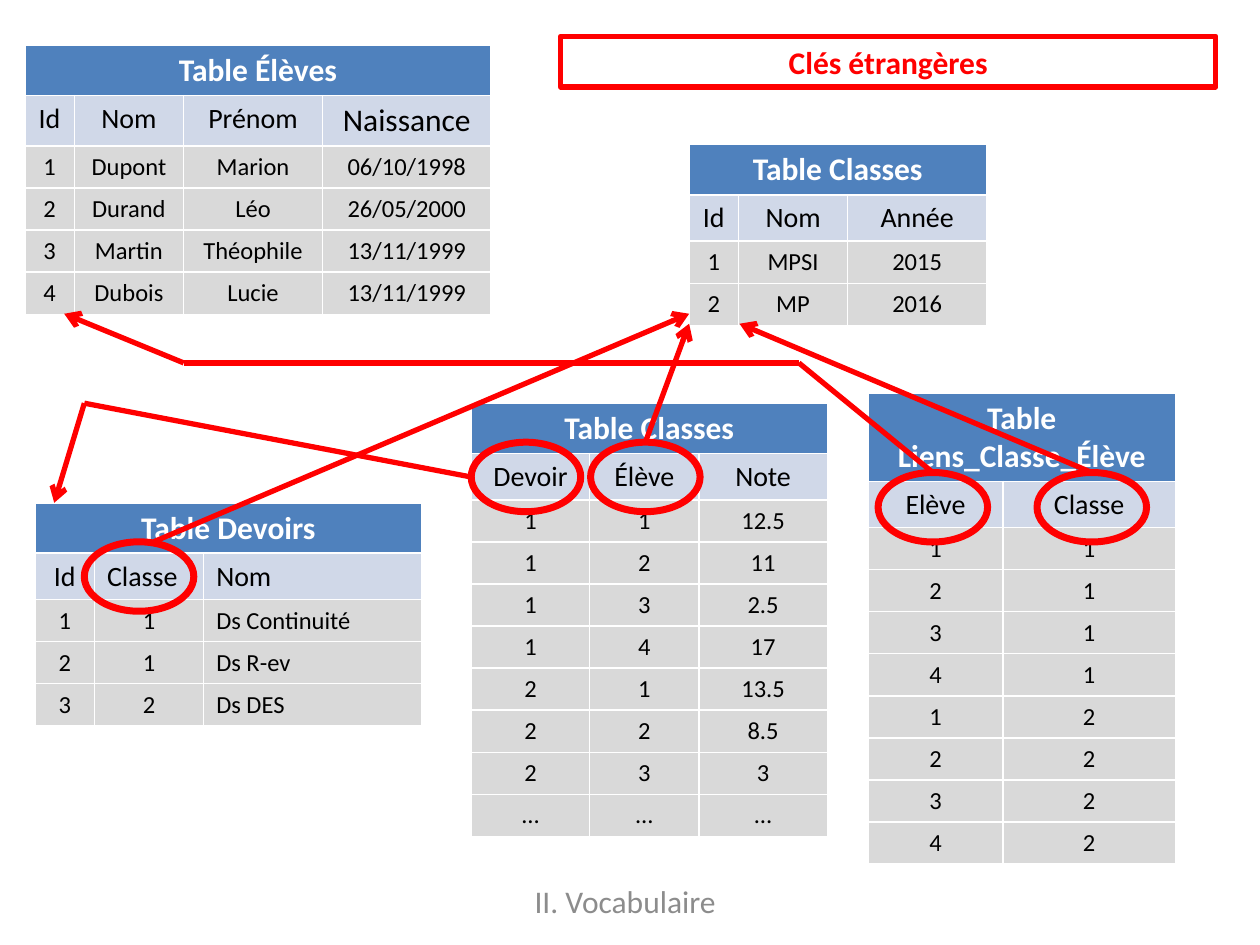
from itertools import pairwise

from lxml import etree
from pptx import Presentation
from pptx.dml.color import RGBColor
from pptx.enum.shapes import MSO_CONNECTOR, MSO_SHAPE
from pptx.enum.text import MSO_ANCHOR, PP_ALIGN
from pptx.oxml.ns import qn
from pptx.util import Pt

STRAIGHT = MSO_CONNECTOR.STRAIGHT
OVAL, RECTANGLE = MSO_SHAPE.OVAL, MSO_SHAPE.RECTANGLE
LEFT, CENTER = PP_ALIGN.LEFT, PP_ALIGN.CENTER
MIDDLE = MSO_ANCHOR.MIDDLE
TOP_SITE = 0

COLORS = {
    "white": "FFFFFF", "black": "000000", "red": "FF0000", "gray": "8C8C8C",
    "title": "4F81BD", "heading": "D0D8E8", "body": "D9D9D9",
}
TITLE = {"size": 18, "color": "white", "bold": True, "fill": "title", "height": 28}
HEADING = {"size": 16, "color": "black", "bold": False, "fill": "heading", "height": 25}
BODY = {"size": 14, "color": "black", "bold": False, "fill": "body", "height": 21.6}


def rgb(name):
    return RGBColor.from_string(COLORS[name])


class KeySlide:
    """Current slide and the style shared by its elements."""

    font = "Calibri"
    accent = "red"
    ring_size = (62.6, 39.7)

    def __init__(self, slide):
        self.slide = slide
        self.shapes = slide.shapes

    def add_text(self, text_frame, text, size, color, bold=False, align=CENTER):
        paragraph = text_frame.paragraphs[0]
        paragraph.alignment = align
        run = paragraph.add_run()
        run.text = text
        values = {"name": self.font, "size": Pt(size), "bold": bold}
        for name, value in values.items():
            setattr(run.font, name, value)
        run.font.color.rgb = rgb(color)

    def footer(self, text, *box):
        text_frame = self.shapes.add_textbox(*map(Pt, box)).text_frame
        text_frame.word_wrap = True
        text_frame.vertical_anchor = MIDDLE
        self.add_text(text_frame, text, 18, "gray")

    def table(self, left, top, widths, title, rows, exceptions=None):
        """Draw a title row, a heading row and body rows; exceptions restyle cells by (row, column)."""
        exceptions = exceptions or {}
        styles = [TITLE, HEADING] + [BODY] * (len(rows) - 1)
        height = sum(style["height"] for style in styles)
        table = self.shapes.add_table(
            len(styles), len(widths), Pt(left), Pt(top), Pt(sum(widths)), Pt(height)
        ).table
        table.horz_banding = False
        for column, width in zip(table.columns, widths):
            column.width = Pt(width)
        table.cell(0, 0).merge(table.cell(0, len(widths) - 1))
        for row_index, (style, texts) in enumerate(zip(styles, [[title], *rows])):
            table.rows[row_index].height = Pt(style["height"])
            for column_index, text in enumerate(texts):
                cell = table.cell(row_index, column_index)
                cell.fill.solid()
                cell.fill.fore_color.rgb = rgb(style["fill"])
                format_values = {name: style[name] for name in ("size", "color", "bold")}
                format_values.update(exceptions.get((row_index, column_index), {}))
                self.add_text(cell.text_frame, text, **format_values)

    def outline(self, kind, box, width):
        shape = self.shapes.add_shape(kind, *map(Pt, box))
        shape.shadow.inherit = False
        shape.fill.background()
        shape.line.color.rgb = rgb(self.accent)
        shape.line.width = Pt(width)
        return shape

    def ring(self, left, top):
        return self.outline(OVAL, (left, top, *self.ring_size), 4)

    def banner(self, text, *box):
        text_frame = self.outline(RECTANGLE, box, 3).text_frame
        text_frame.word_wrap = True
        text_frame.vertical_anchor = MIDDLE
        self.add_text(text_frame, text, 18, self.accent, bold=True)

    def route(self, *points, ring=None):
        """Link points by straight lines with a final arrow; a ring joins the start at its top."""
        if ring is not None:
            ring_top = ((ring.left + ring.width / 2) / Pt(1), ring.top / Pt(1))
            points = (ring_top, *points)
        connectors = []
        for start, end in pairwise(points):
            connector = self.shapes.add_connector(STRAIGHT, *map(Pt, (*start, *end)))
            connector.line.color.rgb = rgb(self.accent)
            connector.line.width = Pt(3)
            etree.SubElement(connector._element.spPr, qn("a:effectLst"))
            connectors.append(connector)
        if ring is not None:
            connectors[0].begin_connect(ring, TOP_SITE)
        line = connectors[-1].line._get_or_add_ln()
        etree.SubElement(line, qn("a:tailEnd"), type="arrow")


def main():
    presentation = Presentation()
    presentation.slide_width, presentation.slide_height = Pt(720), Pt(540)
    page = KeySlide(presentation.slides.add_slide(presentation.slide_layouts[6]))

    page.footer("II. Vocabulaire", 34, 500.5, 646.5, 28.5)
    page.table(14.2, 25.8, [28.3, 62.4, 79.4, 96.4], "Table Élèves", [
        ["Id", "Nom", "Prénom", "Naissance"],
        ["1", "Dupont", "Marion", "06/10/1998"],
        ["2", "Durand", "Léo", "26/05/2000"],
        ["3", "Martin", "Théophile", "13/11/1999"],
        ["4", "Dubois", "Lucie", "13/11/1999"],
    ], {(1, 3): {"size": 18}})
    page.table(393.7, 82.6, [28.3, 62.4, 79.4], "Table Classes", [
        ["Id", "Nom", "Année"],
        ["1", "MPSI", "2015"],
        ["2", "MP", "2016"],
    ])
    page.table(496.1, 224.6, [77, 98.6], "Table Liens_Classe_Élève", [
        ["Elève", "Classe"],
        *([student, group] for group in "12" for student in "1234"),
    ])
    left_cells = [(1, 1), *((row, 2) for row in range(1, 5))]
    page.table(20, 287.3, [34, 62.4, 124.6], "Table Devoirs", [
        ["Id", "Classe", "Nom"],
        ["1", "1", "Ds Continuité"],
        ["2", "1", "Ds R-ev"],
        ["3", "2", "Ds DES"],
    ], {position: {"align": LEFT} for position in left_cells})
    page.table(269.3, 230.4, [67.7, 62.4, 73.4], "Table Classes", [
        ["Devoir", "Élève", "Note"],
        ["1", "1", "12.5"],
        ["1", "2", "11"],
        ["1", "3", "2.5"],
        ["1", "4", "17"],
        ["2", "1", "13.5"],
        ["2", "2", "8.5"],
        ["2", "3", "3"],
        ["…"] * 3,
    ])

    link_class = page.ring(592.6, 270)
    link_student = page.ring(501.8, 270)
    page.ring(269.3, 252.7)
    mark_student = page.ring(337.5, 252.7)
    page.ring(48.2, 309.6)

    page.route((456.5, 207.4), (105, 207.4), (36.7, 179.3), ring=link_student)
    page.route((422.6, 185), ring=link_class)
    page.route((393.8, 185), ring=mark_student)
    page.route((269.3, 272.6), (48.2, 230.4), (31, 287.3))
    page.route((87.8, 309.6), (393.8, 179.3))

    page.banner("Clés étrangères", 320.4, 20.7, 374.4, 29)
    presentation.save("out.pptx")


if __name__ == "__main__":
    main()
